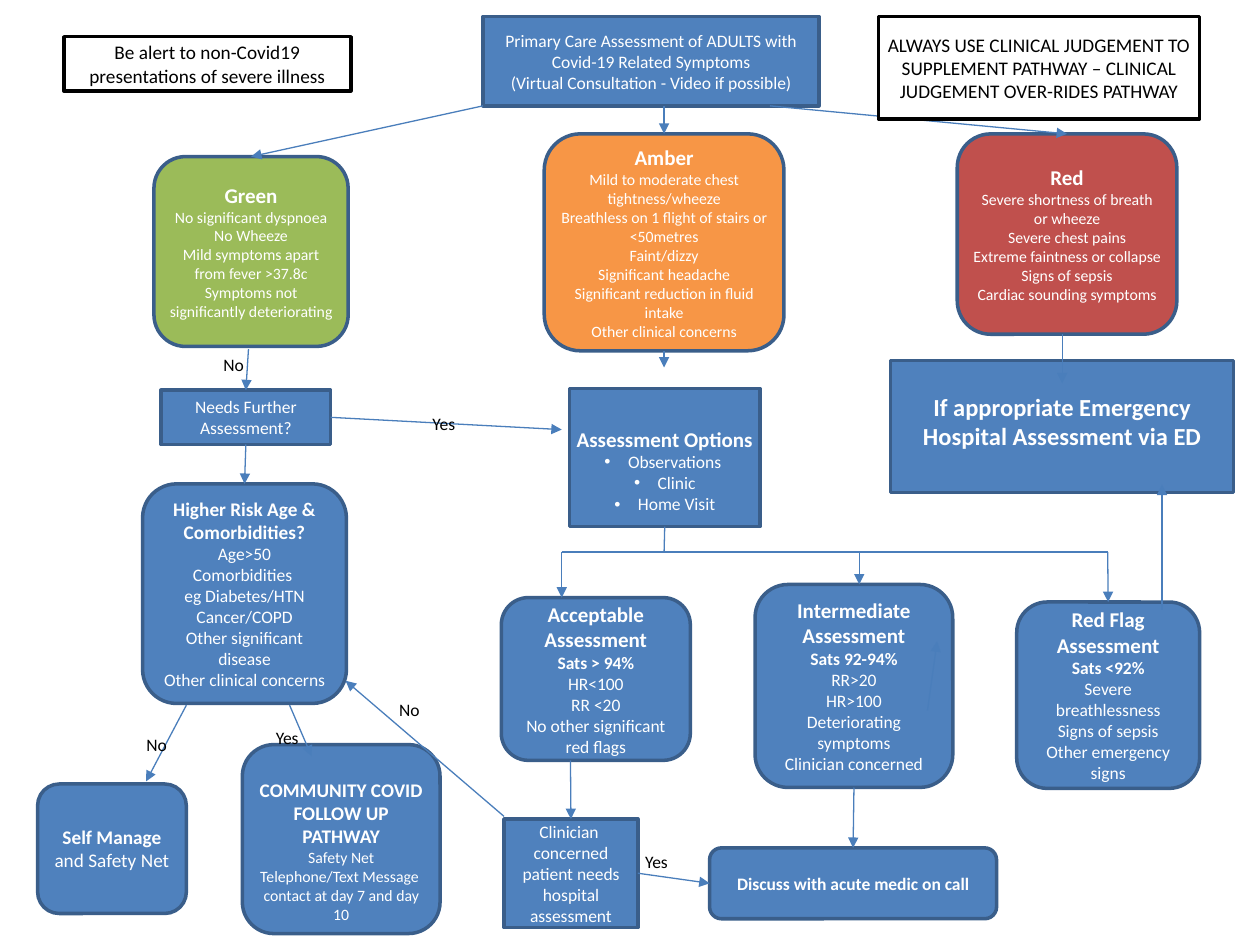
from lxml import etree
from pptx import Presentation
from pptx.dml.color import RGBColor
from pptx.enum.shapes import MSO_CONNECTOR, MSO_SHAPE
from pptx.enum.text import MSO_ANCHOR, PP_ALIGN
from pptx.oxml.ns import qn
from pptx.util import Pt

RECT, ROUND = MSO_SHAPE.RECTANGLE, MSO_SHAPE.ROUNDED_RECTANGLE
STRAIGHT = MSO_CONNECTOR.STRAIGHT
MIDDLE, LEFT_ALIGN, CENTER = MSO_ANCHOR.MIDDLE, PP_ALIGN.LEFT, PP_ALIGN.CENTER
TOP, LEFT, BOTTOM, RIGHT = range(4)
BLUE, BORDER, ARROW = "4F81BD", "3A5E8A", "4A7EBB"
WHITE, BLACK = "FFFFFF", "000000"


def rgb(value):
    return RGBColor.from_string(value)


def write(frame, text, size=10, bold=False, color=WHITE, align=CENTER, bullet=False, same_line=False):
    """Add text as a new paragraph, or as a further run of the last one."""
    paragraph = frame.paragraphs[-1]
    if paragraph.runs and not same_line:
        paragraph = frame.add_paragraph()
    paragraph.alignment = align
    run = paragraph.add_run()
    run.text = text
    run.font.name, run.font.size, run.font.bold = "Calibri", Pt(size), bold
    run.font.color.rgb = rgb(color)
    if bullet:
        properties = paragraph._p.get_or_add_pPr()
        properties.set("marL", str(Pt(13.5)))
        properties.set("indent", str(-Pt(13.5)))
        etree.SubElement(properties, qn("a:buFont")).set("typeface", "Arial")
        etree.SubElement(properties, qn("a:buChar")).set("char", "•")


prs = Presentation()
prs.slide_width, prs.slide_height = Pt(720), Pt(540)
slide = prs.slides.add_slide(prs.slide_layouts[6])

# Boxes: outline, fill, position, then text blocks of size, bold and paragraphs
boxes = {
    "start": (RECT, BLUE, (276, 9.5, 192, 51), [
        (10, False, ["Primary Care Assessment of ADULTS with", "Covid-19 Related Symptoms",
                     "(Virtual Consultation - Video if possible)"])]),
    "green": (ROUND, "9BBB59", (88, 89.5, 111, 108.5), [
        (12, True, ["Green"]),
        (9, False, ["No significant dyspnoea", "No Wheeze", "Mild symptoms apart from fever >37.8c",
                    "Symptoms not significantly deteriorating"])]),
    "amber": (ROUND, "F79646", (311, 76.5, 137, 124), [
        (12, True, ["Amber"]),
        (9, False, ["Mild to moderate chest tightness/wheeze",
                    "Breathless on 1 flight of stairs or <50metres", "Faint/dizzy",
                    "Significant headache", "Significant reduction in fluid intake",
                    "Other clinical concerns"])]),
    "red": (ROUND, "C0504D", (547, 76.5, 125.5, 114.5), [
        (12, True, ["Red"]),
        (9, False, ["Severe shortness of breath or wheeze", "Severe chest pains",
                    "Extreme faintness or collapse", "Signs of sepsis",
                    "Cardiac sounding symptoms"])]),
    "emergency": (RECT, BLUE, (509, 206, 196, 75.5), [
        (14, True, ["If appropriate Emergency Hospital Assessment via ED"])]),
    "higher risk": (ROUND, BLUE, (81.5, 276.5, 116.5, 125.5), [
        (11, True, ["Higher Risk Age & Comorbidities?"]),
        (10, False, ["Age>50", "Comorbidities ", "eg Diabetes/HTN", "Cancer/COPD",
                     "Other significant disease", "Other clinical concerns"])]),
    "options": (RECT, BLUE, (325.5, 222, 108.7, 79), [
        (12, True, ["Assessment Options "]),
        (10, False, ["Observations ", "Clinic", "Home Visit"])]),
    "self manage": (ROUND, BLUE, (21.5, 448, 85, 74), [(11, True, ["Self Manage "])]),
    "community": (ROUND, BLUE, (138.5, 425.5, 113, 108), [
        (11, True, ["COMMUNITY COVID FOLLOW UP PATHWAY"]),
        (9, False, ["Safety Net", "Telephone/Text Message  contact at day 7 and day 10"])]),
    "red flag": (ROUND, BLUE, (581, 344, 104.5, 106.5), [
        (12, True, ["Red Flag Assessment"]),
        (10, True, ["Sats <92%"]),
        (10, False, ["Severe breathlessness", "Signs of sepsis", "Other emergency signs"])]),
    "acceptable": (ROUND, BLUE, (286.5, 341.5, 108, 93), [
        (12, True, ["Acceptable Assessment"]),
        (10, True, ["Sats > 94%"]),
        (10, False, ["HR<100", "RR <20", "No other significant red flags"])]),
    "intermediate": (ROUND, BLUE, (431.5, 334, 113, 116), [
        (12, True, ["Intermediate Assessment"]),
        (10, True, ["Sats 92-94%"]),
        (10, False, ["RR>20", "HR>100", "Deteriorating symptoms", "Clinician concerned"])]),
    "discuss": (ROUND, BLUE, (405.5, 484.5, 164, 40.5), [
        (10, True, ["Discuss with acute medic on call"])]),
    "further": (RECT, BLUE, (92, 223, 97, 31), [(10, False, ["Needs Further Assessment?"])]),
    "clinician": (RECT, BLUE, (288, 468, 76.5, 62), [
        (10, False, ["Clinician  concerned patient needs hospital assessment"])]),
    "judgement note": (RECT, WHITE, (502, 9.5, 183.5, 58.5), [
        (11, False, ["ALWAYS USE CLINICAL JUDGEMENT TO SUPPLEMENT PATHWAY – CLINICAL "
                     "JUDGEMENT OVER-RIDES PATHWAY"])]),
    "alert note": (RECT, WHITE, (36.5, 21, 164, 31), [
        (11, False, ["Be alert to non-Covid19 presentations of severe illness"])]),
}
# Space above, below and beside the text where it differs from the usual
margins = {"emergency": (0, 6, 16), "options": (14.5, 0, 3), "community": (13.5, 0, 3.5)}

drawn = {}
for name, (outline, fill, place, blocks) in boxes.items():
    is_note = fill == WHITE
    box = drawn[name] = slide.shapes.add_shape(outline, *map(Pt, place))
    box.shadow.inherit = False
    box.fill.solid()
    box.fill.fore_color.rgb = rgb(fill)
    box.line.color.rgb = rgb(BLACK if is_note else BORDER)
    box.line.width = Pt(2)
    frame = box.text_frame
    frame.word_wrap, frame.vertical_anchor = True, MIDDLE
    above, below, beside = margins.get(name, (0, 0, 3.5))
    frame.margin_top, frame.margin_bottom = Pt(above), Pt(below)
    frame.margin_left = frame.margin_right = Pt(beside)
    for size, bold, paragraphs in blocks:
        for text in paragraphs:
            write(frame, text, size=size, bold=bold, color=BLACK if is_note else WHITE,
                  bullet=name == "options" and not bold)
write(drawn["self manage"].text_frame, "and Safety Net", size=11, same_line=True)

# Connectors: each end is a point or a side of a box, then whether it has an arrowhead
connectors = [
    ((276, 60.5), ("green", TOP), True),
    ((440, 60.5), ("red", TOP), True),
    ((379.5, 60.5), ("amber", TOP), True),
    (("amber", BOTTOM), (379.5, 210), True),
    ((607, 191), (607, 219), True),
    ((530, 406), (535.5, 366.5), True),
    (("options", BOTTOM), (379.5, 315.5), False),
    ((321, 315.5), (633, 315.5), False),
    ((321, 315.5), (321, 341.5), True),
    ((491, 315.5), (491, 334), True),
    ((633, 315.5), ("red flag", TOP), True),
    (("intermediate", BOTTOM), ("discuss", TOP), True),
    ((664, 348.5), (664, 277), True),
    ((142, 199.5), ("further", TOP), True),
    (("further", BOTTOM), ("higher risk", TOP), True),
    (("further", RIGHT), (321, 245.5), True),
    ((106.5, 403), (83.5, 446.5), True),
    ((165.5, 403), (178, 432), True),
    ((326, 434.5), ("clinician", TOP), True),
    (("clinician", RIGHT), ("discuss", LEFT), True),
    ((288, 466.5), (197.5, 389), True),
]
for start, end, has_head in connectors:
    points = [(0, 0) if isinstance(stop[0], str) else stop for stop in (start, end)]
    link = slide.shapes.add_connector(STRAIGHT, *(Pt(value) for point in points for value in point))
    for stop, join in ((start, link.begin_connect), (end, link.end_connect)):
        if isinstance(stop[0], str):
            join(drawn[stop[0]], stop[1])
    link.line.color.rgb = rgb(ARROW)
    link.line.width = Pt(0.75)
    if has_head:
        etree.SubElement(link.line._get_or_add_ln(), qn("a:tailEnd")).set("type", "triangle")
    etree.SubElement(link._element.spPr, qn("a:effectLst"))

# The judgement note covers the arrow to Red
slide.shapes._spTree.append(drawn["judgement note"]._element)

# Yes and No labels
for answer, left, top in [("No", 80, 416), ("Yes", 154, 412), ("No", 124, 198.5),
                          ("Yes", 243.5, 232.5), ("No", 224.5, 396), ("Yes", 365, 483)]:
    label = slide.shapes.add_textbox(Pt(left), Pt(top), Pt(29), Pt(18)).text_frame
    label.word_wrap = True
    label.margin_left = label.margin_right = label.margin_top = label.margin_bottom = Pt(3.6)
    write(label, answer, color=BLACK, align=LEFT_ALIGN)

prs.save("out.pptx")
